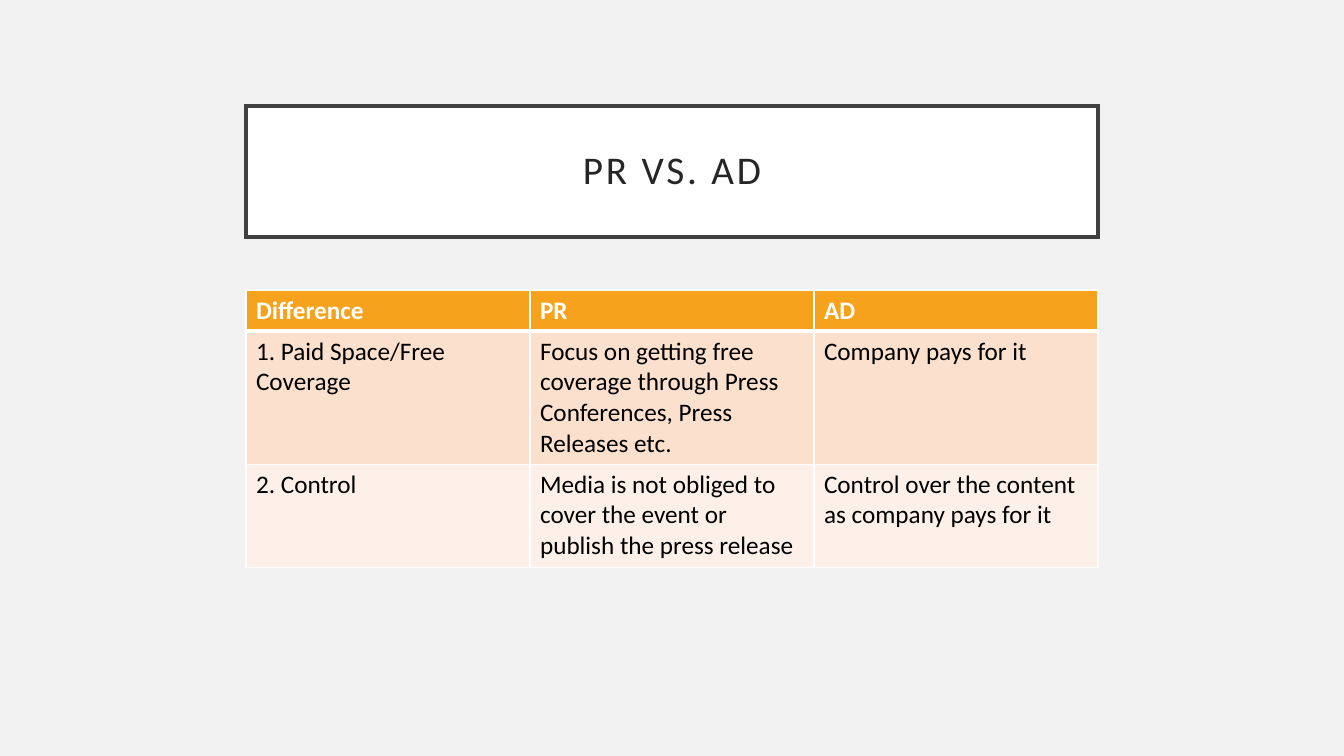
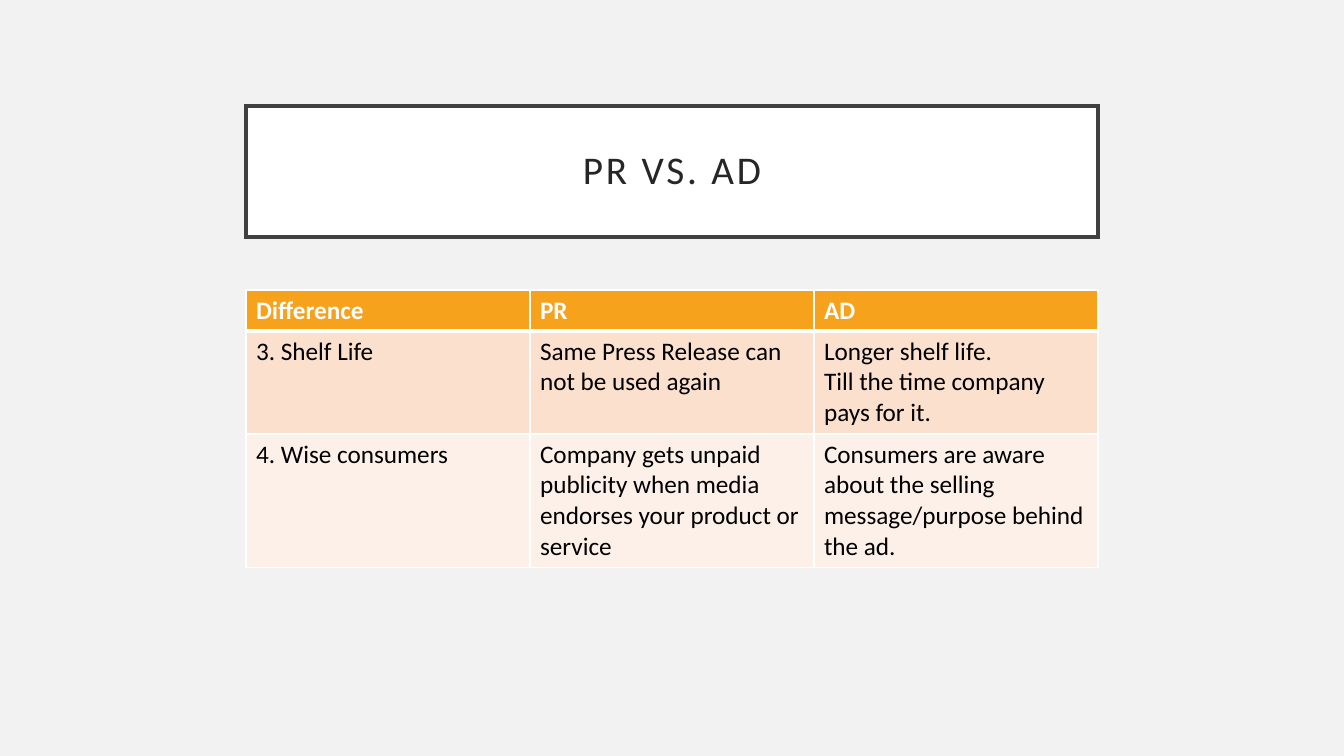
import pptx
import pptx.dml.color
import pptx.enum.shapes
import pptx.enum.text
import pptx.oxml.ns
import pptx.util
from lxml import etree

TITLE = "PR VS. AD"
HEAD = ("Difference", "PR", "AD")
# Each slide: body rows as (height in px, cell texts)
SLIDES = [
    [
        (133, ("1. Paid Space/Free Coverage",
               "Focus on getting free coverage through Press Conferences, Press Releases etc.",
               "Company pays for it")),
        (103, ("2. Control",
               "Media is not obliged to cover the event or publish the press release",
               "Control over the content as company pays for it")),
    ],
    [
        (103, ("3. Shelf Life",
               "Same Press Release can not be used again",
               "Longer shelf life.\nTill the time company pays for it.")),
        (133, ("4. Wise consumers",
               "Company gets unpaid publicity when media endorses your product or service",
               "Consumers are aware about the selling message/purpose behind the ad.")),
    ],
]


def rgb(code):
    return pptx.dml.color.RGBColor.from_string(code)


THEME = {
    "back": "F2F2F2",
    "box": "FFFFFF",
    "edge": "404040",
    "head": "F6A21D",
    "bands": ("FBE0CD", "FDF0E8"),
    "rule": "FFFFFF",
    "thin": 1,
    "thick": 3,
    "frame": 2.5,
    "title": {"name": "Calibri", "size": 28, "color": "262626", "bold": False},
    "label": {"name": "Calibri", "size": 18, "color": "FFFFFF", "bold": True},
    "body": {"name": "Calibri", "size": 18, "color": "000000", "bold": False},
}

WIDE, HIGH = 1344, 756
LEFT, SPAN = 246, 852
BOX_TOP, BOX_HIGH = 106, 131
GRID_TOP, HEAD_HIGH = 290, 41
INSET = 20


def px(count):
    return pptx.util.Emu(round(count * 12192000 / WIDE))


def paint(fill, code):
    fill.solid()
    fill.fore_color.rgb = rgb(code)


def style(frame, look):
    for para in frame.paragraphs:
        for run in para.runs:
            values = {"name": look["name"], "size": pptx.util.Pt(look["size"]),
                      "bold": look["bold"]}
            for key, value in values.items():
                setattr(run.font, key, value)
            run.font.color.rgb = rgb(look["color"])


def border(cell, top, bottom):
    """Rule all four sides, ahead of the fill as the schema asks."""
    props = cell._tc.get_or_add_tcPr()
    thin = THEME["thin"]
    sides = {"L": thin, "R": thin, "T": top, "B": bottom}
    for spot, (side, width) in enumerate(sides.items()):
        line = etree.Element(pptx.oxml.ns.qn("a:ln" + side), w=str(pptx.util.Pt(width)))
        fill = etree.SubElement(line, pptx.oxml.ns.qn("a:solidFill"))
        etree.SubElement(fill, pptx.oxml.ns.qn("a:srgbClr"), val=THEME["rule"])
        props.insert(spot, line)


def add_title(slide):
    box = slide.shapes.add_shape(pptx.enum.shapes.MSO_SHAPE.RECTANGLE,
                                 px(LEFT), px(BOX_TOP), px(SPAN), px(BOX_HIGH))
    box.shadow.inherit = False
    paint(box.fill, THEME["box"])
    box.line.color.rgb = rgb(THEME["edge"])
    box.line.width = pptx.util.Pt(THEME["frame"])
    edge = box._element.spPr.find(pptx.oxml.ns.qn("a:ln"))
    etree.SubElement(edge, pptx.oxml.ns.qn("a:miter"), lim="800000")
    frame = box.text_frame
    values = {"text": TITLE, "word_wrap": True,
              "vertical_anchor": pptx.enum.text.MSO_ANCHOR.MIDDLE}
    values.update({"margin_" + side: px(INSET) for side in ("left", "top", "right", "bottom")})
    for key, value in values.items():
        setattr(frame, key, value)
    para = frame.paragraphs[0]
    para.alignment = pptx.enum.text.PP_ALIGN.CENTER
    para.line_spacing = 0.9
    style(frame, THEME["title"])
    para.runs[0]._r.get_or_add_rPr().set("spc", "200")


def add_grid(slide, body):
    rows = [(HEAD_HIGH, HEAD)] + body
    total = sum(high for high, _ in rows)
    table = slide.shapes.add_table(len(rows), len(HEAD), px(LEFT), px(GRID_TOP),
                                   px(SPAN), px(total)).table
    table.horz_banding = False
    for column in table.columns:
        column.width = px(SPAN / len(HEAD))
    thin, thick = THEME["thin"], THEME["thick"]
    for r, (high, texts) in enumerate(rows):
        table.rows[r].height = px(high)
        color = THEME["bands"][(r - 1) % 2] if r else THEME["head"]
        for c, text in enumerate(texts):
            cell = table.cell(r, c)
            cell.text = text
            style(cell.text_frame, THEME["body" if r else "label"])
            paint(cell.fill, color)
            border(cell, thick if r == 1 else thin, thin if r else thick)


def main():
    deck = pptx.Presentation()
    deck.slide_width, deck.slide_height = px(WIDE), px(HIGH)
    paint(deck.slide_master.background.fill, THEME["back"])
    for body in SLIDES:
        slide = deck.slides.add_slide(deck.slide_layouts[6])
        add_title(slide)
        add_grid(slide, body)
    deck.save("out.pptx")


if __name__ == "__main__":
    main()
